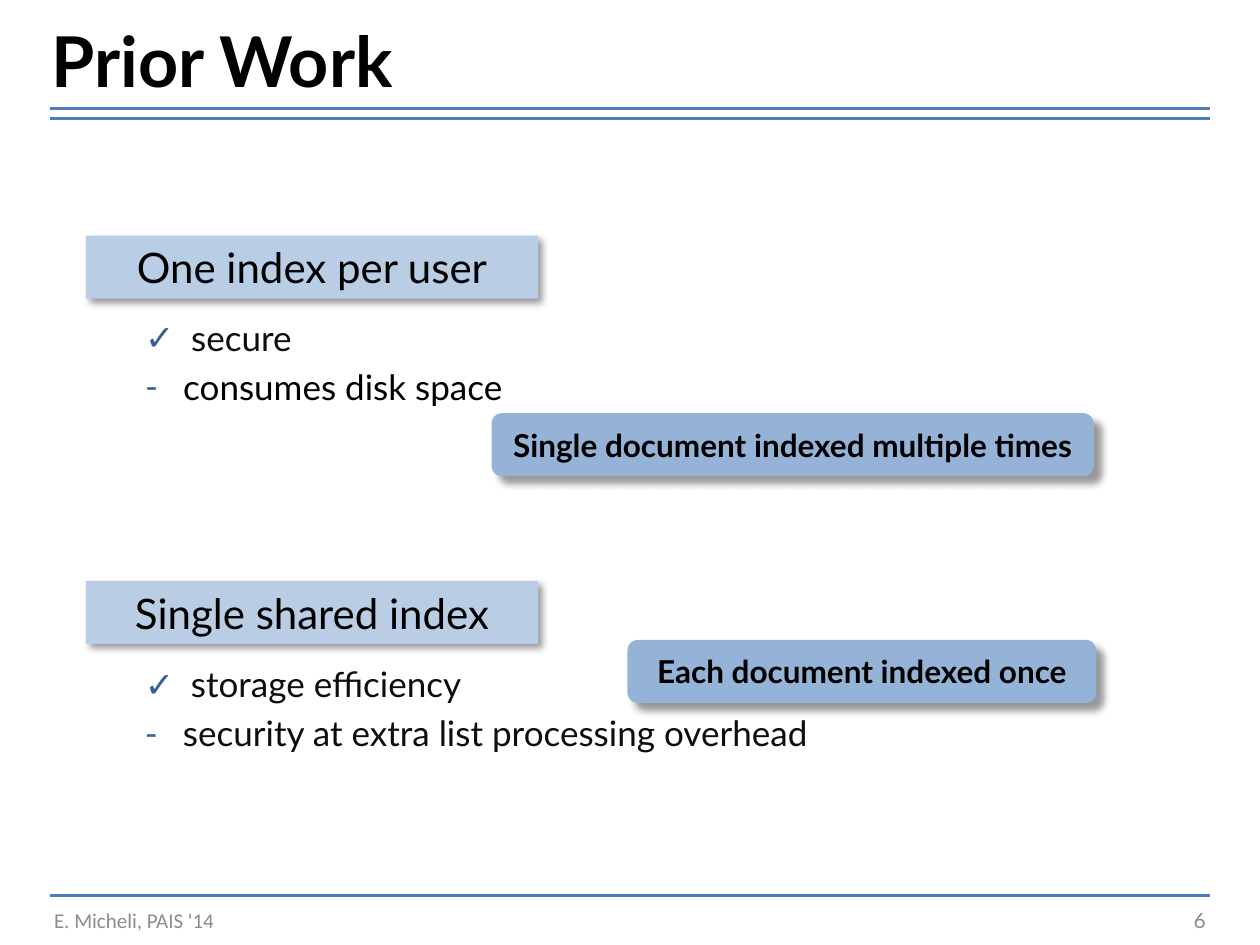
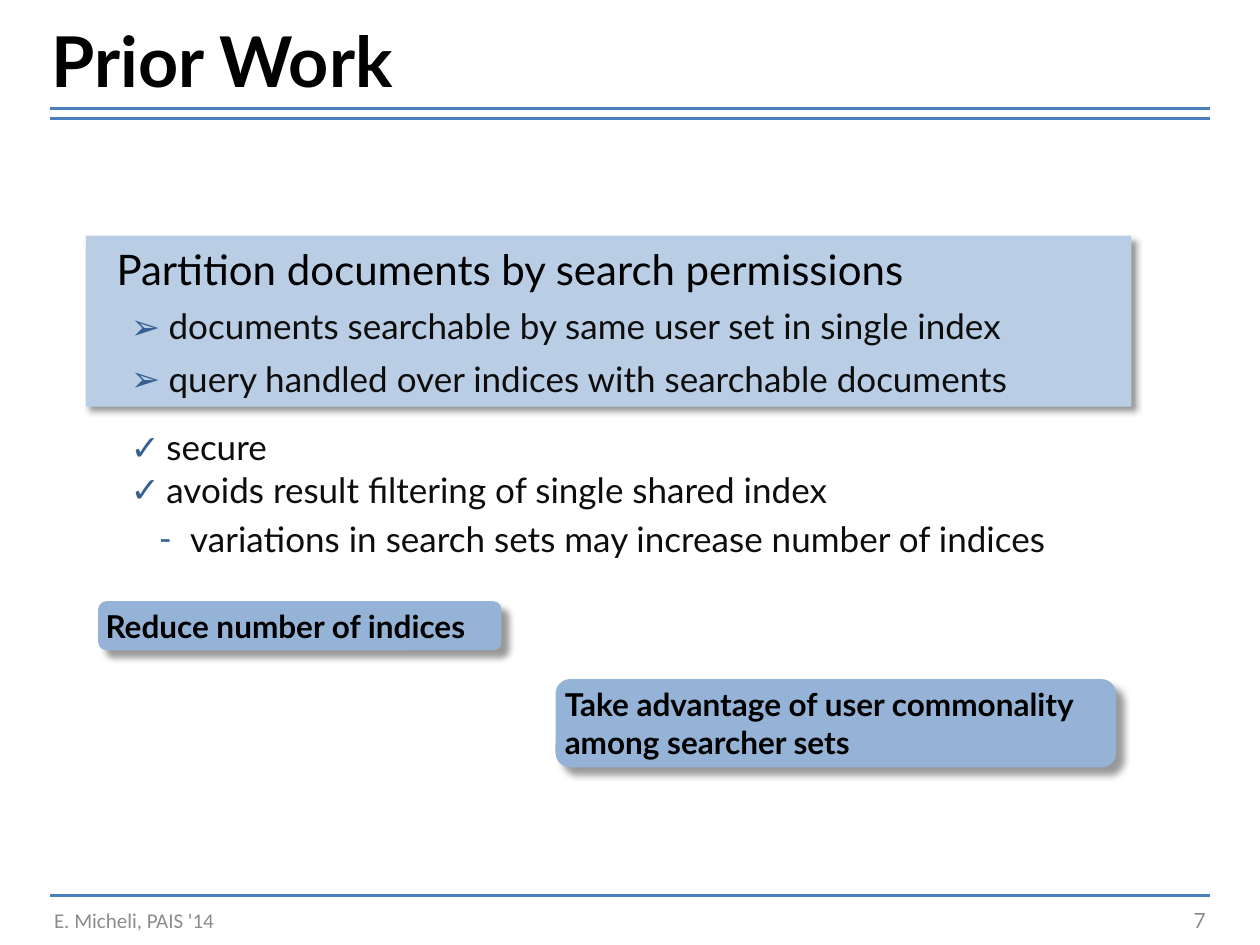
from lxml.etree import SubElement
from pptx import Presentation
from pptx.dml.color import RGBColor
from pptx.enum.shapes import MSO_CONNECTOR, MSO_SHAPE
from pptx.enum.text import MSO_ANCHOR, MSO_AUTO_SIZE, PP_ALIGN
from pptx.oxml.ns import qn
from pptx.util import Cm, Pt

BLACK = RGBColor(0x00, 0x00, 0x00)
NEAR_BLACK = RGBColor(0x0D, 0x0D, 0x0D)
GREY = RGBColor(0x8C, 0x8C, 0x8C)
RULE_BLUE = RGBColor(0x4B, 0x7E, 0xBC)
BULLET_BLUE = RGBColor(0x37, 0x60, 0x92)
HEADING_BLUE = RGBColor(0xB9, 0xCD, 0xE5)
CALLOUT_BLUE = RGBColor(0x95, 0xB3, 0xD7)


def write_paragraph(shape, text, size=20, color=NEAR_BLACK, font="Lato", bold=False,
                    align=PP_ALIGN.LEFT, anchor=MSO_ANCHOR.TOP, bullet=None,
                    bullet_at=0, text_at=0, before=0, line_spacing=None):
    """Add one paragraph; bullet_at and text_at are distances in cm from the text edge."""
    frame = shape.text_frame
    frame.word_wrap = True
    frame.auto_size = MSO_AUTO_SIZE.NONE
    frame.vertical_anchor = anchor
    paragraph = frame.add_paragraph() if frame.text else frame.paragraphs[0]
    if bullet:
        paragraph.level = 1
        properties = paragraph._p.get_or_add_pPr()
        properties.set("marL", str(Cm(text_at)))
        properties.set("indent", str(Cm(bullet_at) - Cm(text_at)))
        bullet_color = SubElement(properties, qn("a:buClr"))
        SubElement(bullet_color, qn("a:srgbClr"), val=str(BULLET_BLUE))
        SubElement(properties, qn("a:buFont"), typeface="Lato")
        SubElement(properties, qn("a:buChar"), char=bullet)
    elif text_at:
        paragraph._p.get_or_add_pPr().set("marL", str(Cm(text_at)))
    paragraph.alignment = align
    paragraph.space_before = Pt(before)
    if line_spacing:
        paragraph.line_spacing = Pt(line_spacing)
    run = paragraph.add_run()
    run.text = text
    run.font.name = font
    run.font.size = Pt(size)
    run.font.bold = bold
    run.font.color.rgb = color


def add_shadowed_box(slide, preset, position, fill, distance):
    shape = slide.shapes.add_shape(preset, *[Cm(length) for length in position])
    shape.fill.solid()
    shape.fill.fore_color.rgb = fill
    shape.line.fill.background()
    shape.shadow.inherit = False
    effects = shape._element.spPr.find(qn("a:effectLst"))
    shadow = SubElement(effects, qn("a:outerShdw"), blurRad=str(Pt(4)), dist=str(Pt(distance)),
                        dir="2700000", algn="tl", rotWithShape="0")
    shadow_color = SubElement(shadow, qn("a:srgbClr"), val=str(BLACK))
    SubElement(shadow_color, qn("a:alpha"), val="40000")
    return shape


presentation = Presentation()
presentation.slide_width = Cm(25.4)
presentation.slide_height = Cm(19.05)

# Title, rules and footer shared by both slides
slides = []
for number in (6, 7):
    slide = presentation.slides.add_slide(presentation.slide_layouts[1])
    slides.append(slide)
    title = slide.shapes.title
    title.left, title.top, title.width, title.height = Cm(0.79), Cm(0.23), Cm(20.45), Cm(1.96)
    write_paragraph(title, "Prior Work", size=40, color=BLACK, bold=True)

    for height in (2.18, 2.39, 18.06):
        rule = slide.shapes.add_connector(MSO_CONNECTOR.STRAIGHT,
                                          Cm(1), Cm(height), Cm(24.4), Cm(height))
        rule.line.color.rgb = RULE_BLUE
        rule.line.width = Pt(1.75)
        SubElement(rule._element.spPr, qn("a:effectLst"))

    footer = slide.shapes.add_textbox(Cm(0.84), Cm(18.03), Cm(6), Cm(1.02))
    write_paragraph(footer, "E. Micheli, PAIS '14", size=12, color=GREY, font="Calibri",
                    anchor=MSO_ANCHOR.MIDDLE)
    page_number = slide.shapes.add_textbox(Cm(18.64), Cm(18.03), Cm(5.92), Cm(1.02))
    write_paragraph(page_number, str(number), size=12, color=GREY,
                    align=PP_ALIGN.RIGHT, anchor=MSO_ANCHOR.MIDDLE)

comparison, partition = slides

# Two index designs, each with a benefit and a cost
first_list = comparison.placeholders[1]
first_list.left, first_list.top, first_list.width, first_list.height = (
    Cm(1.4), Cm(6.25), Cm(22.63), Cm(2.64))
second_list = comparison.shapes.add_textbox(Cm(1.4), Cm(13.23), Cm(18.85), Cm(2.64))
designs = [
    (4.75, "One index per user", first_list, "secure", "consumes disk space", BLACK),
    (11.71, "Single shared index", second_list, "storage efficiency",
     "security at extra list processing overhead", NEAR_BLACK),
]
for top, name, points, benefit, cost, cost_color in designs:
    heading = add_shadowed_box(comparison, MSO_SHAPE.RECTANGLE, (1.73, top, 9.12, 1.27),
                               HEADING_BLUE, 3)
    write_paragraph(heading, name, size=24, color=BLACK, align=PP_ALIGN.CENTER)
    write_paragraph(points, benefit, bullet="✓", bullet_at=1.27, text_at=2.2)
    write_paragraph(points, cost, color=cost_color, bullet="-", bullet_at=1.27, text_at=2.04,
                    before=4)

# Partitioning approach
approach = add_shadowed_box(partition, MSO_SHAPE.RECTANGLE, (1.73, 4.75, 21.08, 3.45),
                            HEADING_BLUE, 3)
write_paragraph(approach, "Partition documents by search permissions", size=24, color=BLACK,
                text_at=0.37, line_spacing=30)
for step in ("documents searchable by same user set in single index",
             "query handled over indices with searchable documents"):
    write_paragraph(approach, step, bullet="➢", bullet_at=0.66, text_at=1.42, line_spacing=30)

# Benefits and cost of partitioning
outcomes = partition.placeholders[1]
outcomes.left, outcomes.top, outcomes.width, outcomes.height = (
    Cm(1.68), Cm(8.46), Cm(22.73), Cm(3.45))
for benefit in ("secure", "avoids result filtering of single shared index"):
    write_paragraph(outcomes, benefit, bullet="✓", bullet_at=0.7, text_at=1.42)
write_paragraph(outcomes, "variations in search sets may increase number of indices",
                bullet="-", bullet_at=1.27, text_at=1.9, before=4)

# Callouts
callouts = [
    (comparison, (9.91, 8.33, 12.14, 1.27), PP_ALIGN.CENTER,
     "Single document indexed multiple times"),
    (comparison, (12.65, 12.9, 9.45, 1.27), PP_ALIGN.CENTER, "Each document indexed once"),
    (partition, (1.98, 12.12, 8.13, 0.99), PP_ALIGN.LEFT, "Reduce number of indices"),
    (partition, (11.2, 13.69, 11.3, 1.78), PP_ALIGN.LEFT,
     "Take advantage of user commonality among searcher sets"),
]
for slide, position, align, text in callouts:
    callout = add_shadowed_box(slide, MSO_SHAPE.ROUNDED_RECTANGLE, position, CALLOUT_BLUE, 6)
    frame = callout.text_frame
    frame.margin_left = frame.margin_right = Cm(0.1)
    frame.margin_top = frame.margin_bottom = Cm(0)
    write_paragraph(callout, text, size=18, color=BLACK, bold=True, align=align,
                    anchor=MSO_ANCHOR.MIDDLE)

presentation.save("out.pptx")
